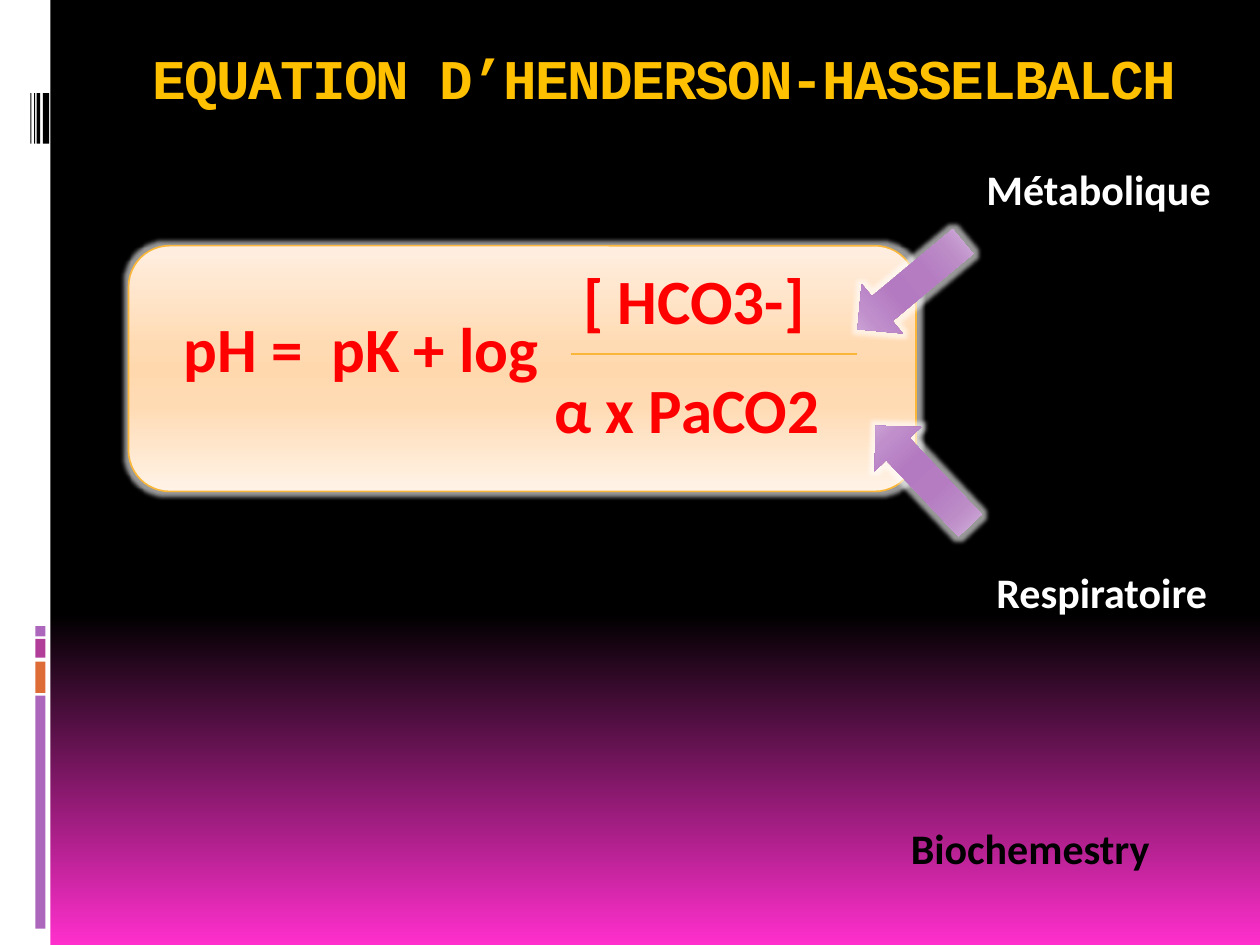
import lxml.etree
import pptx
import pptx.dml.color
import pptx.enum.shapes
import pptx.enum.text
import pptx.oxml.ns
import pptx.util

Inches = pptx.util.Inches
qn = pptx.oxml.ns.qn
SHAPES = pptx.enum.shapes.MSO_SHAPE

COLORS = {
    "white": "FFFFFF", "black": "000000", "violet": "AC66BB",
    "orange": "DE6C36", "plum": "B13F9A", "gold": "F9B639",
    "title": "FFC000", "formula": "FF0000",
}
BACKGROUND_STOPS = [(0, "000000"), (65, "000000"), (100, "FF2FCD")]
PANEL_STOPS = [(0, "FFEFE1"), (40, "FFDBB4"), (50, "FFD8AD"),
               (65, "FFDBB4"), (100, "FFF3E7")]
ARROW_STOPS = [(0, "DFC4E6"), (25, "BC8CC7"), (40, "B57CC2"), (50, "B47AC1"),
               (60, "B57CC2"), (75, "BF8ECB"), (100, "E0C3E8")]


def rgb(name):
    return pptx.dml.color.RGBColor.from_string(COLORS[name])


def write_text(frame, text, size=24, color="white", font="Calibri",
               align=pptx.enum.text.PP_ALIGN.LEFT, spacing=0):
    """Fill a frame with one bold line; spacing is in points per letter."""
    frame.word_wrap = True
    paragraph = frame.paragraphs[0]
    paragraph.alignment = align
    run = paragraph.add_run()
    run.text = text
    run.font.name = font
    run.font.size = pptx.util.Pt(size)
    run.font.bold = True
    run.font.color.rgb = rgb(color)
    if spacing:
        run.font._element.set("spc", str(spacing * 100))


def set_gradient(fill, element, stops):
    """Give the fill inside element a top-to-bottom gradient."""
    fill.gradient()
    gradient = element.find(".//" + qn("a:gradFill"))
    stop_list = gradient.find(qn("a:gsLst"))
    for stop in list(stop_list):
        stop_list.remove(stop)
    for position, color in stops:
        stop = lxml.etree.SubElement(stop_list, qn("a:gs"), pos=str(position * 1000))
        lxml.etree.SubElement(stop, qn("a:srgbClr"), val=color)
    gradient.find(qn("a:lin")).set("ang", "5400000")


class SlideBuilder:
    """Holds the glow style and the slide being drawn."""

    glow_radius = Inches(0.07)
    glow_opacity = 60

    def __init__(self, slide):
        self.slide = slide

    def background(self, stops):
        set_gradient(self.slide.background.fill, self.slide._element, stops)

    def shape(self, kind, left, top, width, height):
        shape = self.slide.shapes.add_shape(
            kind, Inches(left), Inches(top), Inches(width), Inches(height))
        shape.shadow.inherit = False
        shape.line.fill.background()
        return shape

    def bar(self, left, top, width, height, color):
        bar = self.shape(SHAPES.RECTANGLE, left, top, width, height)
        bar.fill.solid()
        bar.fill.fore_color.rgb = rgb(color)

    def glowing_shape(self, kind, left, top, width, height, stops, rotation=0):
        shape = self.shape(kind, left, top, width, height)
        shape.rotation = rotation
        properties = shape._element.spPr
        set_gradient(shape.fill, properties, stops)
        glow = lxml.etree.SubElement(properties.find(qn("a:effectLst")),
                                     qn("a:glow"), rad=str(self.glow_radius))
        color = lxml.etree.SubElement(glow, qn("a:srgbClr"), val=COLORS["white"])
        lxml.etree.SubElement(color, qn("a:alpha"), val=str(self.glow_opacity * 1000))
        return shape

    def rule(self, left, right, y, color, weight):
        line = self.slide.shapes.add_connector(
            pptx.enum.shapes.MSO_CONNECTOR.STRAIGHT,
            Inches(left), Inches(y), Inches(right), Inches(y))
        line.line.color.rgb = rgb(color)
        line.line.width = pptx.util.Pt(weight)
        lxml.etree.SubElement(line._element.spPr, qn("a:effectLst"))

    def text(self, text, left, top, width, height, **style):
        box = self.slide.shapes.add_textbox(
            Inches(left), Inches(top), Inches(width), Inches(height))
        write_text(box.text_frame, text, **style)


def main():
    presentation = pptx.Presentation()
    presentation.slide_width = Inches(10)
    presentation.slide_height = Inches(7.5)
    builder = SlideBuilder(presentation.slides.add_slide(presentation.slide_layouts[6]))
    builder.background(BACKGROUND_STOPS)

    builder.bar(0, 0, 0.4, 7.5, "white")
    for top, height, color in [(5.52, 1.85, "violet"), (5.25, 0.25, "orange"),
                               (5.07, 0.15, "plum"), (4.97, 0.08, "violet")]:
        builder.bar(0.28, top, 0.08, height, color)
    for left, width in [(0.34, 0.05), (0.29, 0.03), (0.27, 0.01), (0.24, 0.01)]:
        builder.bar(left, 0.74, width, 0.4, "black")

    panel = builder.glowing_shape(SHAPES.ROUNDED_RECTANGLE, 1.02, 1.95, 6.25, 1.95,
                                  PANEL_STOPS)
    panel.line.color.rgb = rgb("gold")
    panel.line.width = pptx.util.Pt(0.94)

    builder.text("EQUATION D’HENDERSON-HASSELBALCH", 1.02, 0.3, 8.5, 0.7,
                 size=32, color="title", font="Courier New",
                 align=pptx.enum.text.PP_ALIGN.CENTER, spacing=-1)

    formula = {"size": 36, "color": "formula"}
    builder.text("pH =  pK + log", 1.36, 2.41, 3.2, 0.71, **formula)
    builder.rule(4.53, 6.8, 2.81, "gold", 1.5)
    builder.text("[ HCO3-]", 4.53, 2.03, 2.27, 0.71, **formula)
    builder.text("α x PaCO2", 4.3, 2.89, 2.5, 0.71, **formula)

    builder.text("Métabolique", 7.73, 1.25, 2.03, 0.5)
    builder.text("Respiratoire", 7.81, 4.45, 2.19, 0.5)
    for left, top, rotation in [(6.97, 1.72, 50.2), (7.07, 3.23, 136.6)]:
        builder.glowing_shape(SHAPES.DOWN_ARROW, left, top, 0.51, 1.09,
                              ARROW_STOPS, rotation)
    builder.text("Biochemestry", 7.13, 6.48, 2.48, 0.91, color="black")

    presentation.save("out.pptx")


if __name__ == "__main__":
    main()
